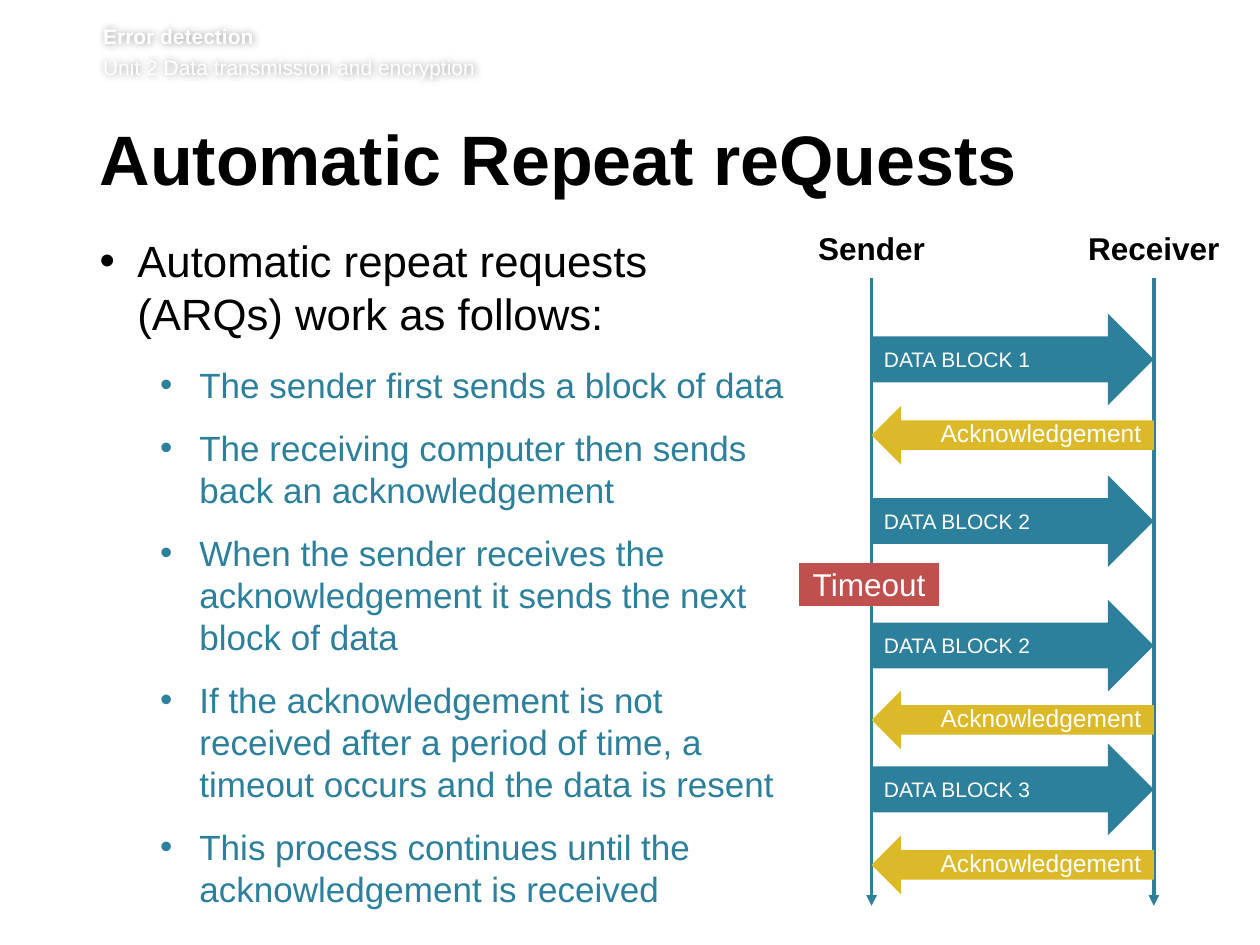
from lxml.etree import SubElement
from pptx import Presentation
from pptx.dml.color import RGBColor
from pptx.enum.shapes import MSO_CONNECTOR, MSO_SHAPE
from pptx.enum.text import MSO_ANCHOR, PP_ALIGN
from pptx.oxml import parse_xml
from pptx.oxml.ns import nsdecls, qn
from pptx.util import Cm, Pt

COLORS = {
    "black": "000000",
    "white": "FFFFFF",
    "teal": "2C809C",
    "yellow": "DCB928",
    "red": "C0504D",
}
SENDER_X, RECEIVER_X = 17.57, 23.26
LIFELINE_TOP, LIFELINE_BOTTOM = 5.61, 18.26
LABEL_WIDTH = 3.63
STEPS = [
    "The sender first sends a block of data",
    "The receiving computer then sends back an acknowledgement",
    "When the sender receives the acknowledgement it sends the next block of data",
    "If the acknowledgement is not received after a period of time, "
    "a timeout occurs and the data is resent",
    "This process continues until the acknowledgement is received",
]
DATA_BLOCKS = [(6.32, 1), (9.58, 2), (12.09, 2), (14.99, 3)]
ACKNOWLEDGEMENT_TOPS = [8.18, 13.92, 16.84]


class SlideBuilder:
    font_name = "Arial"

    def __init__(self, slide):
        self.slide = slide

    def color(self, name):
        return RGBColor.from_string(COLORS[name])

    def format_paragraph(self, paragraph, size, color, bold=False, align=PP_ALIGN.LEFT):
        paragraph.alignment = align
        for run in paragraph.runs:
            run.font.name = self.font_name
            run.font.size = Pt(size)
            run.font.bold = bold
            run.font.color.rgb = self.color(color)

    def set_margins(self, text_frame, margins):
        text_frame.margin_left, text_frame.margin_top = Cm(margins[0]), Cm(margins[1])
        text_frame.margin_right, text_frame.margin_bottom = Cm(margins[2]), Cm(margins[3])

    def text_box(self, left, top, width, height, lines, margins=(0, 0, 0, 0)):
        shape = self.slide.shapes.add_textbox(Cm(left), Cm(top), Cm(width), Cm(height))
        text_frame = shape.text_frame
        text_frame.word_wrap = True
        self.set_margins(text_frame, margins)
        text_frame.text = "\n".join(lines)
        return shape

    def header(self, heading, unit):
        shape = self.text_box(2.08, 0.48, 22.4, 1.24, [heading, unit], (0, 0, 0, 0.13))
        first, second = shape.text_frame.paragraphs
        self.format_paragraph(first, 12, "white", bold=True)
        self.format_paragraph(second, 12, "white")
        second.space_before = Pt(2.9)
        shape._element.spPr.append(parse_xml(
            f'<a:effectLst {nsdecls("a")}><a:outerShdw blurRad="50800" dist="0" '
            'algn="ctr" rotWithShape="0"><a:srgbClr val="000000">'
            '<a:alpha val="40000"/></a:srgbClr></a:outerShdw></a:effectLst>'))

    def title(self, text):
        shape = self.text_box(2.01, 2.51, 21.72, 1.85, [text], (0, 0.13, 0.25, 0.13))
        paragraph = shape.text_frame.paragraphs[0]
        paragraph.line_spacing = Pt(39)
        self.format_paragraph(paragraph, 40, "black", bold=True)

    def bullet(self, paragraph, indent, hanging):
        properties = paragraph._p.get_or_add_pPr()
        properties.set("marL", str(Cm(indent)))
        properties.set("indent", str(-Cm(hanging)))
        SubElement(properties, qn("a:buFont")).set("typeface", self.font_name)
        SubElement(properties, qn("a:buChar")).set("char", "•")

    def bullet_list(self, intro, steps):
        shape = self.text_box(2.01, 4.72, 14.07, 9.6, [intro, *steps], (0, 0, 0.25, 0.13))
        first, *others = shape.text_frame.paragraphs
        self.bullet(first, 0.76, 0.76)
        first.line_spacing, first.space_after = Pt(30), Pt(14)
        self.format_paragraph(first, 25, "black")
        for paragraph in others:
            paragraph.level = 1
            self.bullet(paragraph, 2.01, 0.79)
            paragraph.line_spacing, paragraph.space_after = Pt(24), Pt(12)
            self.format_paragraph(paragraph, 20, "teal")

    def lifeline(self, name, x):
        connector = self.slide.shapes.add_connector(
            MSO_CONNECTOR.STRAIGHT, Cm(x), Cm(LIFELINE_TOP), Cm(x), Cm(LIFELINE_BOTTOM))
        connector.line.color.rgb = self.color("teal")
        connector.line.width = Pt(2)
        SubElement(connector.line._get_or_add_ln(), qn("a:tailEnd")).set("type", "triangle")
        SubElement(connector._element.spPr, qn("a:effectLst"))
        label = self.text_box(x - LABEL_WIDTH / 2, 4.62, LABEL_WIDTH, 0.76, [name])
        self.format_paragraph(
            label.text_frame.paragraphs[0], 18, "black", bold=True, align=PP_ALIGN.CENTER)

    def block(self, kind, left, top, width, height, fill, text, size, align,
              margins=(0.25, 0.13, 0.25, 0.13)):
        shape = self.slide.shapes.add_shape(kind, Cm(left), Cm(top), Cm(width), Cm(height))
        shape.shadow.inherit = False
        shape.fill.solid()
        shape.fill.fore_color.rgb = self.color(fill)
        shape.line.fill.background()
        text_frame = shape.text_frame
        text_frame.word_wrap = True
        text_frame.vertical_anchor = MSO_ANCHOR.MIDDLE
        self.set_margins(text_frame, margins)
        text_frame.text = text
        self.format_paragraph(text_frame.paragraphs[0], size, "white", align=align)

    def data_arrow(self, top, number):
        self.block(MSO_SHAPE.RIGHT_ARROW, SENDER_X, top, RECEIVER_X - SENDER_X, 1.85,
                   "teal", f"DATA BLOCK {number}", 12, PP_ALIGN.LEFT)

    def acknowledgement_arrow(self, top):
        self.block(MSO_SHAPE.LEFT_ARROW, SENDER_X, top, RECEIVER_X - SENDER_X, 1.19,
                   "yellow", "Acknowledgement", 14, PP_ALIGN.RIGHT, (0.25, 0, 0.25, 0.1))

    def timeout(self):
        self.block(MSO_SHAPE.FLOWCHART_PROCESS, 16.1, 11.35, 2.84, 0.86,
                   "red", "Timeout", 18, PP_ALIGN.CENTER)


def main():
    presentation = Presentation()
    presentation.slide_width, presentation.slide_height = Cm(25.4), Cm(19.05)
    builder = SlideBuilder(presentation.slides.add_slide(presentation.slide_layouts[6]))
    builder.header("Error detection", "Unit 2 Data transmission and encryption")
    builder.title("Automatic Repeat reQuests")
    builder.bullet_list("Automatic repeat requests (ARQs) work as follows:", STEPS)
    builder.lifeline("Sender", SENDER_X)
    builder.lifeline("Receiver", RECEIVER_X)
    for top, number in DATA_BLOCKS:
        builder.data_arrow(top, number)
    for top in ACKNOWLEDGEMENT_TOPS:
        builder.acknowledgement_arrow(top)
    builder.timeout()
    presentation.save("out.pptx")


if __name__ == "__main__":
    main()
